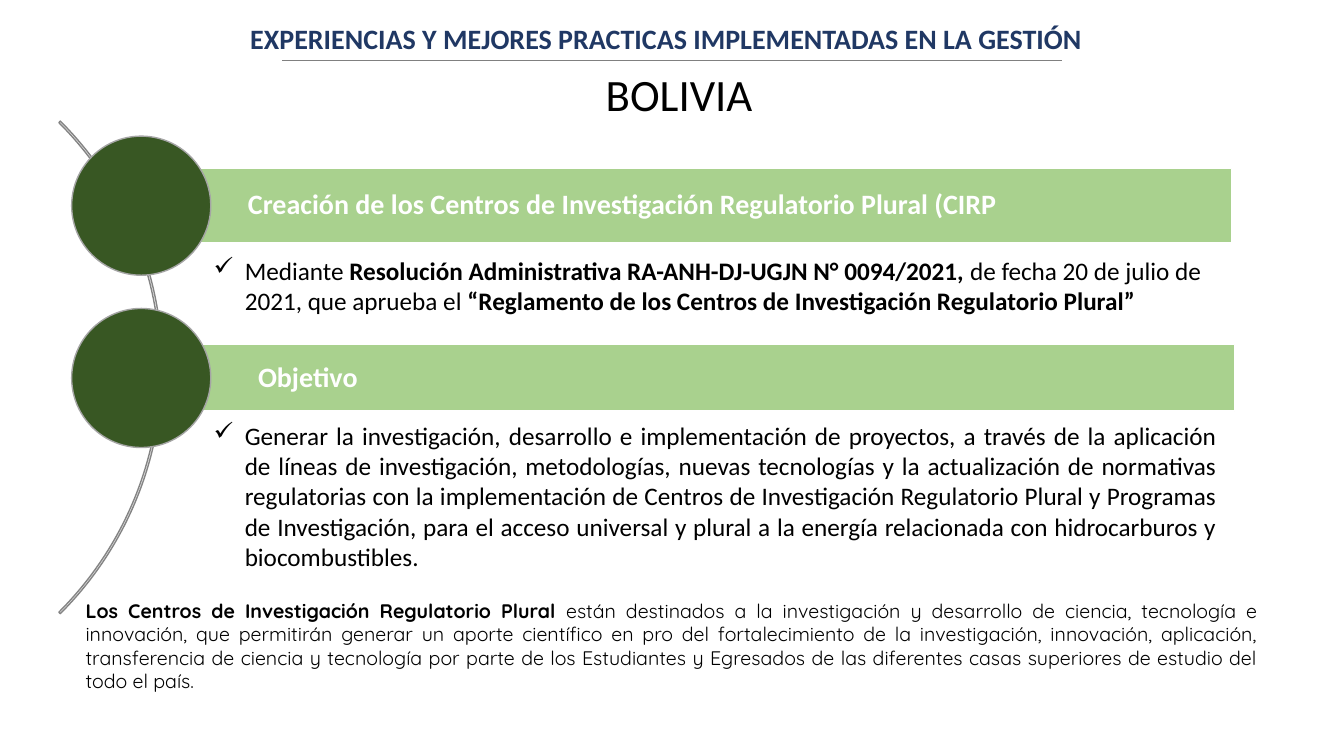
from pptx import Presentation
from pptx.dml.color import RGBColor as Rgb
from pptx.enum.shapes import MSO_CONNECTOR as Link, MSO_SHAPE as Kind
from pptx.enum.text import MSO_ANCHOR as Anchor, PP_ALIGN as Align
from pptx.oxml.ns import qn
from pptx.util import Inches, Pt
from lxml.etree import SubElement as Sub

HUES = {
    "navy": "203864", "black": "000000", "white": "FFFFFF", "band": "A9D18E",
    "dot": "385723", "ring": "A5A5A5", "arc": "848484", "rule": "808080",
}

deck = Presentation()
deck.slide_width, deck.slide_height = Inches(13.33), Inches(7.5)
slide = deck.slides.add_slide(deck.slide_layouts[6])
shapes = slide.shapes

# Grid of 100 columns by 100 rows
COL, ROW = deck.slide_width / 100, deck.slide_height / 100


def draw(kind, x, y, w, h, fill, line):
    """Add a shape, or a text box when kind is None, at grid cells."""
    box = [int(x * COL), int(y * ROW), int(w * COL), int(h * ROW)]
    if kind is None:
        item = shapes.add_textbox(*box)
    else:
        item = shapes.add_shape(kind, *box)
        item.shadow.inherit = False
        item.line.color.rgb = Rgb.from_string(HUES[line])
        item.line.width = Pt(1)
        if fill:
            item.fill.solid()
            item.fill.fore_color.rgb = Rgb.from_string(HUES[fill])
        else:
            item.fill.background()
    item.text_frame.word_wrap = True
    return item


def write(item, runs, size, hue, bold=None, align=Align.LEFT, font="Calibri", mark=None):
    """Fill the first paragraph; runs are (text, bold) pairs."""
    para = item.text_frame.paragraphs[0]
    para.alignment = align
    if mark:
        props = para._p.get_or_add_pPr()
        props.set("marL", str(Inches(0.31)))
        props.set("indent", str(-Inches(0.31)))
        Sub(props, qn("a:buChar")).set("char", mark)
    para.font.name, para.font.size, para.font.bold = font, Pt(size), bold
    para.font.color.rgb = Rgb.from_string(HUES[hue])
    for text, heavy in runs:
        run = para.add_run()
        run.text = text
        if heavy:
            run.font.bold = True
    return para


# Heading, country and rule
head = draw(None, 0, -3.6, 99.15, 18, None, None)
head.text_frame.vertical_anchor = Anchor.MIDDLE
write(head, [("EXPERIENCIAS Y MEJORES PRACTICAS IMPLEMENTADAS EN LA GESTIÓN", False)],
      20, "navy", True, Align.CENTER).line_spacing = 0.9
land = draw(None, 44.33, 8.13, 14.18, 8.53, None, None)
write(land, [("BOLIVIA", False)], 32, "black")

rule = shapes.add_connector(
    Link.STRAIGHT, int(21 * COL), int(8 * ROW), int(79 * COL), int(8 * ROW))
rule.line.color.rgb = Rgb.from_string(HUES["rule"])
rule.line.width = Pt(1)
Sub(rule._element.spPr, qn("a:effectLst"))

# Closing note
note = draw(None, 5.63, 78.53, 88.73, 13.87, None, None)
write(note, [
    ("Los Centros de Investigación Regulatorio Plural ", True),
    ("están destinados a la investigación y desarrollo de ciencia, tecnología e "
     "innovación, que permitirán generar un aporte científico en pro del "
     "fortalecimiento de la investigación, innovación, aplicación, transferencia de "
     "ciencia y tecnología por parte de los Estudiantes y Egresados de las diferentes "
     "casas superiores de estudio del todo el país.", False),
], 14, "black", align=Align.JUSTIFY, font="Quicksand")

# Arc behind the bands
arc = draw(Kind.BLOCK_ARC, -39.75, 2.53, 51.83, 92.13, None, "arc")
for i, turn in enumerate((189, 27, 0.003)):
    arc.adjustments[i] = turn

# Bands with their circles: title, left, top, width, height
bands = [
    ("Creación de los Centros de Investigación Regulatorio Plural (CIRP",
     9.75, 22.27, 81.9, 9.87),
    ("Objetivo", 10.5, 45.6, 81.38, 8.8),
]
DOT = 18.4
for title, x, y, w, h in bands:
    band = draw(Kind.RECTANGLE, x, y, w, h, "band", "white")
    frame = band.text_frame
    frame.vertical_anchor = Anchor.MIDDLE
    frame.margin_left = int(8.7 * COL)
    frame.margin_right = frame.margin_top = frame.margin_bottom = Inches(0.06)
    write(band, [(title, False)], 20, "white", True).line_spacing = 0.9
    draw(Kind.OVAL, 5.33, y + (h - DOT) / 2, DOT * ROW / COL, DOT, "dot", "ring")

# Checked points: top, width, height, alignment, runs
points = [
    (33.07, 79.2, 13.47, Align.LEFT, [
        ("Mediante ", False),
        ("Resolución Administrativa RA-ANH-DJ-UGJN N° 0094/2021, ", True),
        ("de fecha 20 de julio de 2021, que aprueba el ", False),
        ("“Reglamento de los Centros de Investigación Regulatorio Plural”", True),
    ]),
    (54.93, 76.13, 25.6, Align.JUSTIFY, [
        ("Generar la investigación, desarrollo e implementación de proyectos, a través "
         "de la aplicación de líneas de investigación, metodologías, nuevas tecnologías "
         "y la actualización de normativas regulatorias con la implementación de Centros "
         "de Investigación Regulatorio Plural y Programas de Investigación, para el "
         "acceso universal y plural a la energía relacionada con hidrocarburos y "
         "biocombustibles.", False),
    ]),
]
for y, w, h, align, runs in points:
    point = draw(None, 15.15, y, w, h, None, None)
    write(point, runs, 18, "black", align=align, mark="✓")

deck.save("out.pptx")
